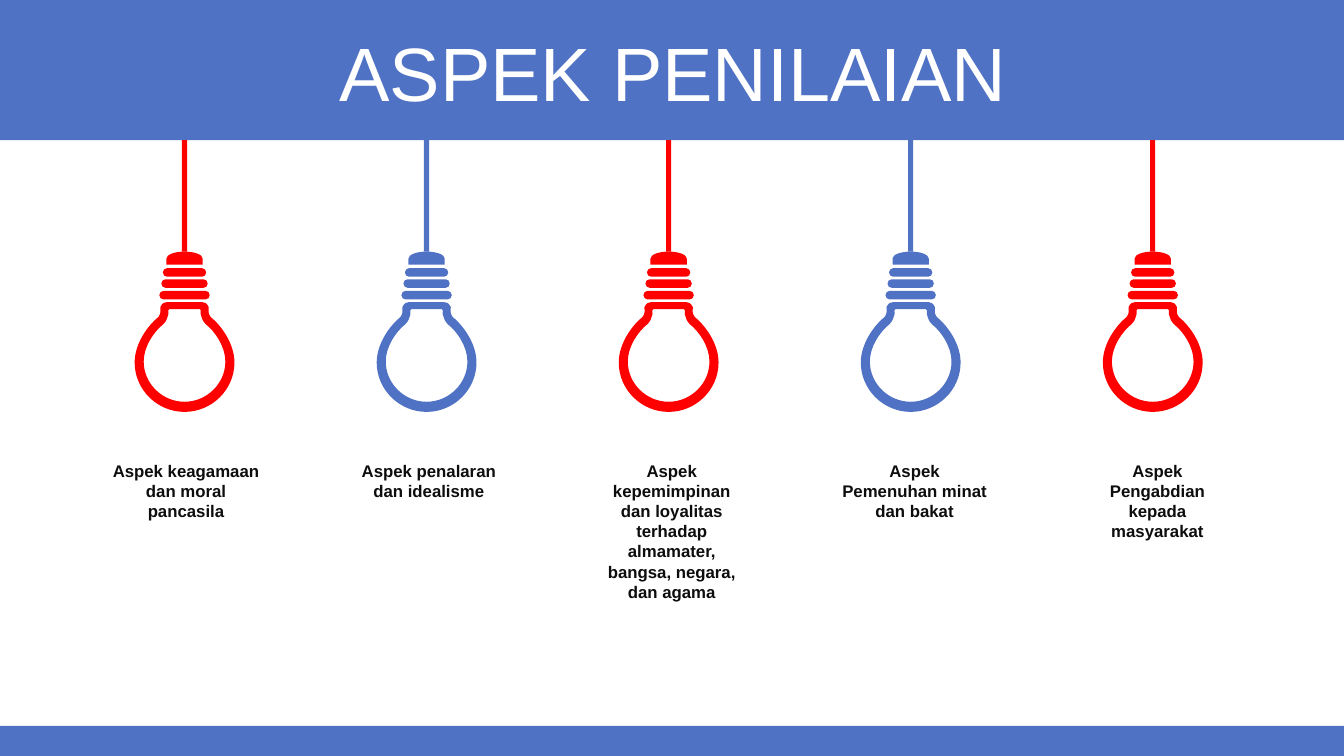
import pptx
import pptx.dml.color
import pptx.enum.shapes
import pptx.enum.text
import pptx.oxml.ns
import pptx.util
from pptx.util import Cm

# Content
TITLE = "ASPEK PENILAIAN"
ASPECTS = [  # label, height of its text box in cm
    ("Aspek keagamaan dan moral pancasila", 1.8),
    ("Aspek penalaran dan idealisme", 1.28),
    ("Aspek kepemimpinan dan loyalitas terhadap almamater, bangsa, negara, dan agama", 3.84),
    ("Aspek Pemenuhan minat dan bakat", 1.8),
    ("Aspek Pengabdian kepada masyarakat", 2.31),
]

BLUE = pptx.dml.color.RGBColor(0x50, 0x72, 0xC4)
RED = pptx.dml.color.RGBColor(0xFF, 0x00, 0x00)
WHITE = pptx.dml.color.RGBColor(0xFF, 0xFF, 0xFF)
BLACK = pptx.dml.color.RGBColor(0x0D, 0x0D, 0x0D)
FONT = "Arial"

# Layout in cm
SLIDE_WIDTH, SLIDE_HEIGHT = 33.87, 19.05
HEADER_HEIGHT, FOOTER_HEIGHT = 3.53, 0.76
FIRST_CENTER, BULB_PITCH, BULB_TOP = 4.65, 6.1, 6.34
CORD_WIDTH = 0.13
LABEL_LEFT, LABEL_PITCH, LABEL_TOP, LABEL_WIDTH = 2.54, 6.12, 11.48, 4.3

# Right halves of the bulb outlines, from the axis down, in hundredths of an inch.
# A step of one point is a line, a step of three points is a Bezier curve.
UNITS_PER_CM = 100 / 2.54
CAP = [[(0, 0)], [(10, 0), (18, 3), (18, 7)], [(18, 13)], [(0, 13)]]
GLASS_OUTER = [
    [(0, 50)], [(17, 50)],
    [(20, 50), (22, 51), (24, 55)],
    [(24, 59), (23, 61), (26, 65)],
    [(36, 73), (49.5, 91), (49.5, 110)],
    [(49.5, 137), (27, 159), (0, 159)],
]
GLASS_INNER = [
    [(0, 57)], [(13, 57)],
    [(17, 57), (16, 58), (16, 62)],
    [(18, 68), (17.5, 68), (21, 72)],
    [(30, 79), (40.5, 94), (40.5, 109)],
    [(40.5, 131), (22, 149), (0, 149)],
]
RINGS = [(21.5, 16.5), (23, 27.5), (25, 39)]  # half width, top
RING_HEIGHT, RING_RADIUS = 8.4, 4


def ring_outline(half_width, top):
    bottom, inside = top + RING_HEIGHT, half_width - RING_RADIUS
    middle = top + RING_HEIGHT / 2
    return [
        [(0, top)], [(inside, top)],
        [(half_width - 1.8, top), (half_width, top + 1.8), (half_width, middle)],
        [(half_width, bottom - 1.8), (half_width - 1.8, bottom), (inside, bottom)],
        [(0, bottom)],
    ]


def mirrored(outline):
    """Complete a right half with its left half, walked back to the start."""
    left_half = []
    for previous, step in zip(outline[-2::-1], outline[:0:-1]):
        points = step[-2::-1] + [previous[-1]]
        left_half.append([(-x, y) for x, y in points])
    return outline + left_half


def paint(shape, color):
    shape.shadow.inherit = False
    shape.fill.solid()
    shape.fill.fore_color.rgb = color
    shape.line.fill.background()


def add_bar(left, top, width, height, color):
    bar = slide.shapes.add_shape(
        pptx.enum.shapes.MSO_SHAPE.RECTANGLE, Cm(left), Cm(top), Cm(width), Cm(height))
    paint(bar, color)


def add_bulb(center, color):
    def place(point):
        return Cm(center + point[0] / UNITS_PER_CM), Cm(BULB_TOP + point[1] / UNITS_PER_CM)

    builder = slide.shapes.build_freeform(*place(BULB_OUTLINES[0][0][0]))
    for number, outline in enumerate(BULB_OUTLINES):
        if number:
            builder.move_to(*place(outline[0][0]))
        points = [place(point) for step in outline[1:] for point in step]
        builder.add_line_segments(points, close=True)
    bulb = builder.convert_to_shape()
    paint(bulb, color)

    # Join the segments of each three-point step into one curve
    segments = iter(list(bulb.element.iter(pptx.oxml.ns.qn("a:lnTo"))))
    for outline in BULB_OUTLINES:
        for step in outline[1:]:
            first, *others = [next(segments) for _ in step]
            if others:
                first.tag = pptx.oxml.ns.qn("a:cubicBezTo")
            for segment in others:
                first.append(segment[0])
                segment.getparent().remove(segment)


def add_text(text, left, top, width, height, size, color, bold=False):
    box = slide.shapes.add_textbox(Cm(left), Cm(top), Cm(width), Cm(height))
    frame = box.text_frame
    frame.word_wrap = True
    frame.text = text
    paragraph = frame.paragraphs[0]
    paragraph.alignment = pptx.enum.text.PP_ALIGN.CENTER
    font = paragraph.runs[0].font
    font.name, font.size, font.bold = FONT, pptx.util.Pt(size), bold
    font.color.rgb = color
    return frame


BULB_OUTLINES = [mirrored(outline) for outline in
                 [CAP, *(ring_outline(*ring) for ring in RINGS), GLASS_OUTER, GLASS_INNER]]

presentation = pptx.Presentation()
presentation.slide_width = Cm(SLIDE_WIDTH)
presentation.slide_height = Cm(SLIDE_HEIGHT)
slide = presentation.slides.add_slide(presentation.slide_layouts[6])

# Header and footer
add_bar(0, 0, SLIDE_WIDTH, HEADER_HEIGHT, BLUE)
add_bar(0, SLIDE_HEIGHT - FOOTER_HEIGHT, SLIDE_WIDTH, FOOTER_HEIGHT, BLUE)
title = add_text(TITLE, 0.89, 0.94, 32.16, 2.01, 54, WHITE)
title.vertical_anchor = pptx.enum.text.MSO_ANCHOR.MIDDLE
title.paragraphs[0].line_spacing = 0.9
title.paragraphs[0].space_before = pptx.util.Pt(10)

# Hanging bulbs with their labels
for index, (label, label_height) in enumerate(ASPECTS):
    color = BLUE if index % 2 else RED
    center = FIRST_CENTER + index * BULB_PITCH
    add_bar(center - CORD_WIDTH / 2, HEADER_HEIGHT, CORD_WIDTH, BULB_TOP - HEADER_HEIGHT, color)
    add_bulb(center, color)
    frame = add_text(label, LABEL_LEFT + index * LABEL_PITCH, LABEL_TOP,
                     LABEL_WIDTH, label_height, 12, BLACK, bold=True)
    frame.margin_left = frame.margin_right = Cm(0.3)
    frame.auto_size = pptx.enum.text.MSO_AUTO_SIZE.SHAPE_TO_FIT_TEXT

presentation.save("out.pptx")
